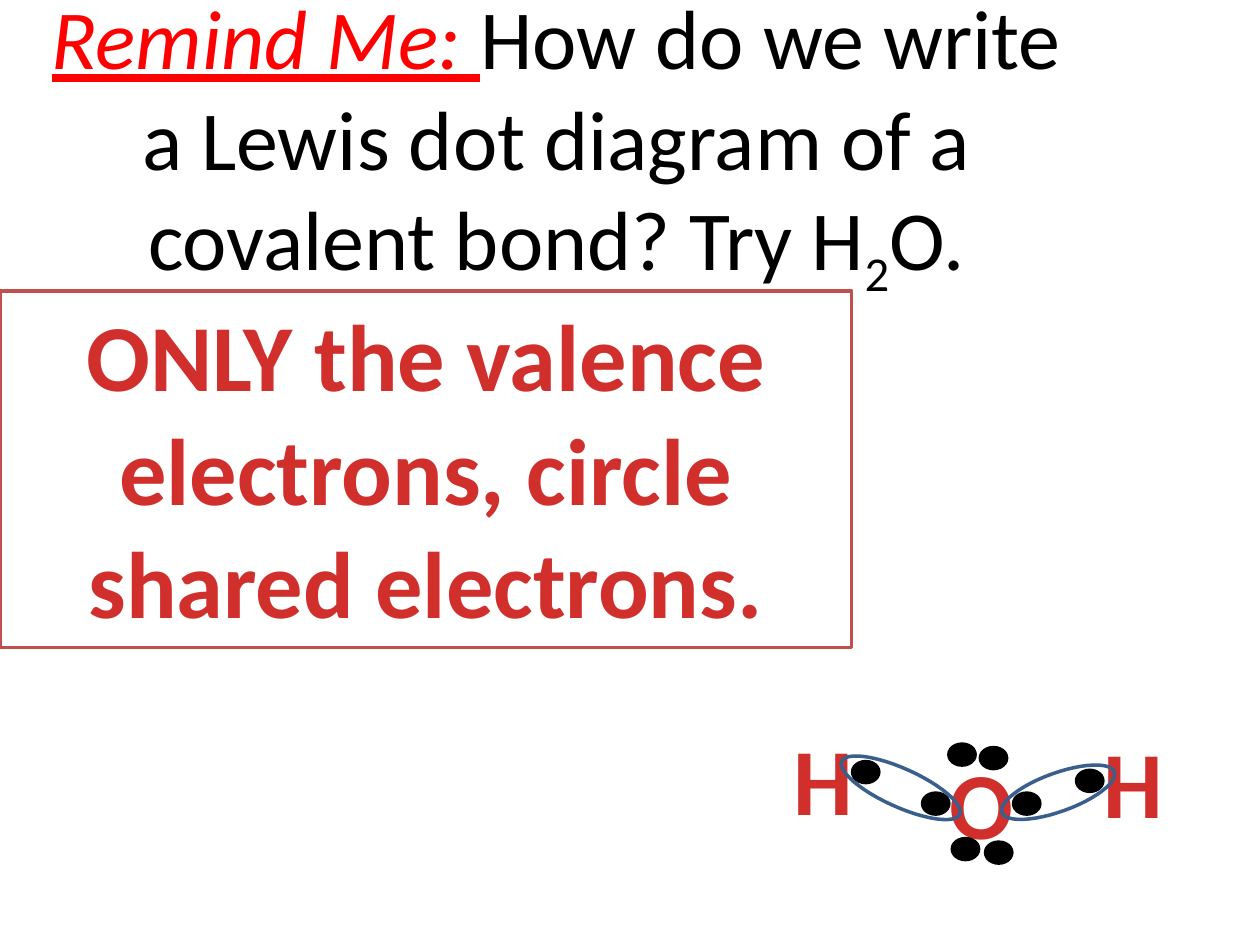
from math import atan2, cos, dist, pi, sin

from pptx import Presentation
from pptx.dml.color import RGBColor as Rgb
from pptx.enum.shapes import MSO_SHAPE as Kind
from pptx.enum.text import MSO_ANCHOR as Anchor, MSO_AUTO_SIZE as Auto, PP_ALIGN as Align
from pptx.util import Pt

RED = Rgb(0xFF, 0x00, 0x00)
BRICK = Rgb(0xD0, 0x2F, 0x2C)
EDGE = Rgb(0xC0, 0x50, 0x4D)
BLUE = Rgb(0x3A, 0x5F, 0x8C)
BLACK = Rgb(0x00, 0x00, 0x00)
WHITE = Rgb(0xFF, 0xFF, 0xFF)

ATOM_W, ATOM_H = 50, 72.7
DOT_W, DOT_H = 15, 12
LOOP_PAD, LOOP_HALF, LOOP_STEPS = 15, 11, 48

ATOMS = [("H", 0, 0), ("H", 177, 2), ("O", 90, 14)]
BONDS = [((49, 33), (89, 51)), ((141, 51), (177, 38))]
LONE_PAIRS = [((104, 23), (122, 25)), ((106, 77), (125, 79))]


def write(par, text, size=54, color=BRICK, bold=False, slant=False, base=0):
    """Add a run of text in the given format."""
    par.alignment = Align.CENTER
    run = par.add_run()
    run.text = text
    font = run.font
    font.name, font.size, font.bold = "Calibri", Pt(size), bold
    font.italic = font.underline = slant
    font.color.rgb = color
    if base:
        font._element.set("baseline", str(base))


def style(shape, line, fill=None):
    """Set the line and the fill of a shape, without a shadow."""
    shape.shadow.inherit = False
    shape.line.color.rgb = line
    shape.line.width = Pt(2)
    if fill is None:
        shape.fill.background()
    else:
        shape.fill.solid()
        shape.fill.fore_color.rgb = fill


def ask(slide, x, y, w, h):
    """Put the question in the title."""
    title = slide.shapes.title
    title.left, title.top, title.width, title.height = map(Pt, (x, y, w, h))
    frame = title.text_frame
    frame.word_wrap = True
    frame.auto_size = Auto.NONE
    frame.vertical_anchor = Anchor.MIDDLE
    par = frame.paragraphs[0]
    plain = {"size": 48, "color": BLACK}
    write(par, "Remind Me: ", size=48, color=RED, slant=True)
    write(par, "How do we write a Lewis dot diagram of a covalent bond? Try H", **plain)
    write(par, "2", base=-25000, **plain)
    write(par, "O.", **plain)


def answer(slide, x, y, w, h):
    """Add the framed rule."""
    shape = slide.shapes.add_shape(Kind.RECTANGLE, *map(Pt, (x, y, w, h)))
    style(shape, EDGE, WHITE)
    frame = shape.text_frame
    frame.word_wrap = True
    frame.vertical_anchor = Anchor.TOP
    write(frame.paragraphs[0],
          "ONLY the valence electrons, circle shared electrons.", bold=True)


def atom(slide, x, y, name):
    """Add the symbol of an atom."""
    box = slide.shapes.add_textbox(*map(Pt, (x, y, ATOM_W, ATOM_H)))
    box.text_frame.word_wrap = False
    write(box.text_frame.paragraphs[0], name, bold=True)


def dot(slide, x, y):
    """Add an electron centred on a point."""
    box = (x - DOT_W / 2, y - DOT_H / 2, DOT_W, DOT_H)
    style(slide.shapes.add_shape(Kind.OVAL, *map(Pt, box)), BLACK, BLACK)


def loop(slide, x, y, one, two):
    """Circle a shared pair with an oval tilted along the pair."""
    mid_x, mid_y = x + (one[0] + two[0]) / 2, y + (one[1] + two[1]) / 2
    tilt = atan2(two[1] - one[1], two[0] - one[0])
    reach = dist(one, two) / 2 + LOOP_PAD
    spots = []
    for step in range(LOOP_STEPS):
        turn = 2 * pi * step / LOOP_STEPS
        along, across = reach * cos(turn), LOOP_HALF * sin(turn)
        spots.append((Pt(mid_x + along * cos(tilt) - across * sin(tilt)),
                      Pt(mid_y + along * sin(tilt) + across * cos(tilt))))
    pen = slide.shapes.build_freeform(*spots[0])
    pen.add_line_segments(spots[1:], close=True)
    style(pen.convert_to_shape(), BLUE)


def water(slide, x, y):
    """Draw the atoms, electrons and shared pairs of water."""
    for name, dx, dy in ATOMS:
        atom(slide, x + dx, y + dy, name)
    for pair in BONDS + LONE_PAIRS:
        for dx, dy in pair:
            dot(slide, x + dx, y + dy)
    for one, two in BONDS:
        loop(slide, x, y, one, two)


def main():
    """Build and save the slide."""
    deck = Presentation()
    deck.slide_width, deck.slide_height = Pt(720), Pt(540)
    slide = deck.slides.add_slide(deck.slide_layouts[0])
    sub = slide.placeholders[1].element
    sub.getparent().remove(sub)
    ask(slide, 12, 24, 612, 116)
    answer(slide, 0, 166.3, 486.7, 203.8)
    water(slide, 445.7, 408.2)
    deck.save("out.pptx")


if __name__ == "__main__":
    main()
